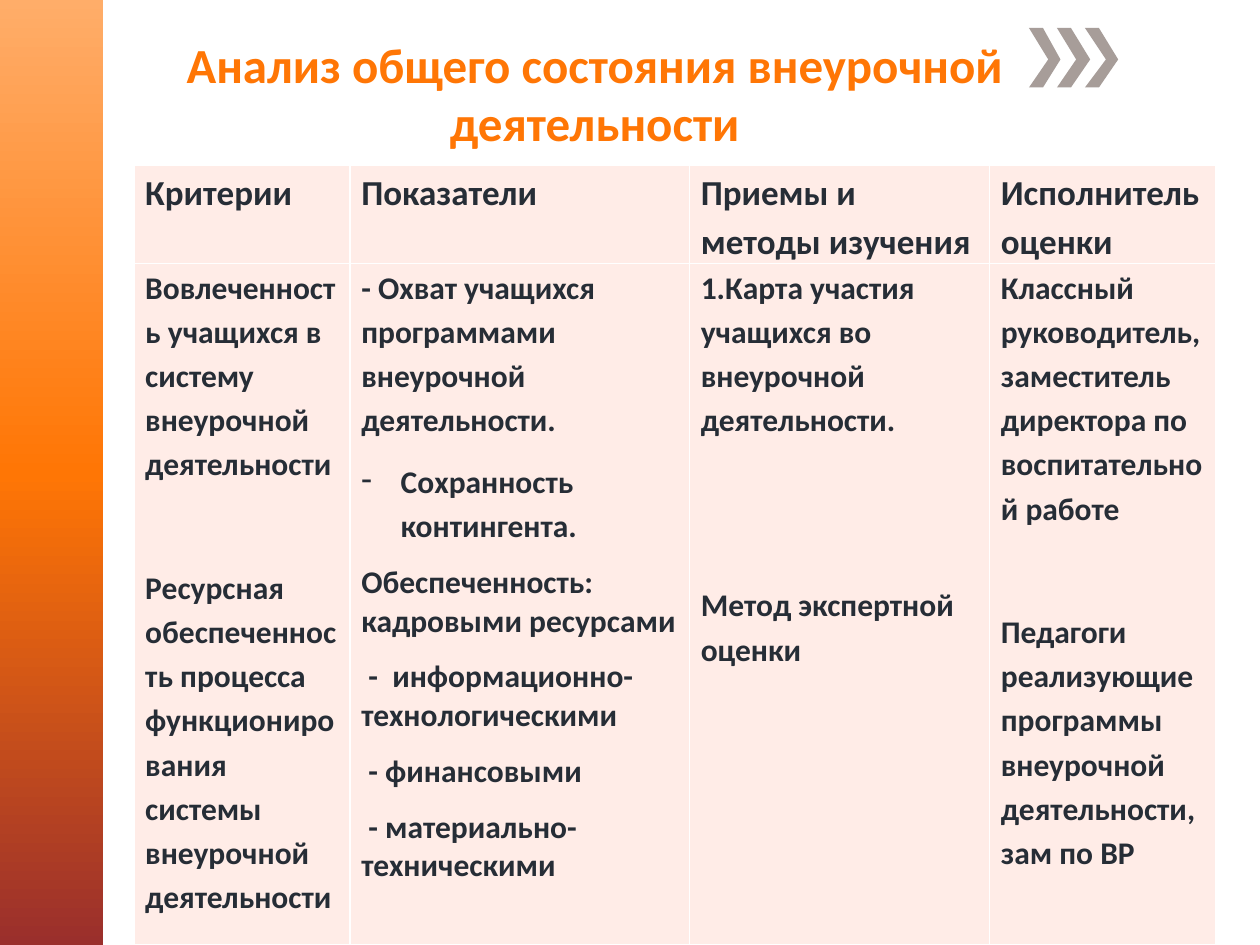
from copy import deepcopy

from lxml.etree import SubElement
from pptx import Presentation
from pptx.dml.color import RGBColor
from pptx.enum.shapes import MSO_SHAPE as Preset
from pptx.enum.text import MSO_ANCHOR as Anchor, PP_ALIGN as Align
from pptx.oxml.ns import qn
from pptx.util import Pt

COLORS = {
    "light": "FFAD69",
    "orange": "FF7605",
    "maroon": "9A2F2C",
    "chevron": "A79D99",
    "cell": "FFECE7",
    "text": "262D36",
    "border": "FFFFFF",
}
FONT = "Calibri"
GAP = 35.25
COLUMN_WIDTHS = [123.5, 194, 171.5, 129]
ROW_HEIGHTS = [56, 389.5]
HEADERS = ["Критерии", "Показатели", "Приемы и методы изучения", "Исполнитель оценки"]
BODY = [
    [
        {"text": "Вовлеченность учащихся в систему внеурочной деятельности"},
        {"text": "Ресурсная обеспеченность процесса функционирования системы "
                 "внеурочной деятельности", "before": GAP},
    ],
    [
        {"text": "- Охват учащихся программами внеурочной деятельности."},
        {"text": "Сохранность контингента.", "bullet": "-"},
        {"text": "Обеспеченность: кадровыми ресурсами", "spacing": 1.0},
        {"text": " -  информационно-технологическими", "spacing": 1.0},
        {"text": " - финансовыми", "spacing": 1.0},
        {"text": " - материально-техническими", "spacing": 1.0},
    ],
    [
        {"text": "1.Карта участия учащихся во внеурочной деятельности."},
        {"text": "Метод экспертной оценки", "before": 2 * GAP},
    ],
    [
        {"text": "Классный руководитель, заместитель директора по воспитательной работе"},
        {"text": "Педагоги реализующие программы внеурочной деятельности, зам по ВР",
         "before": GAP},
    ],
]


def color(name):
    return RGBColor.from_string(COLORS[name])


def set_font(paragraph, size, color_name):
    font = paragraph.font
    font.name = FONT
    font.size = Pt(size)
    font.bold = True
    font.color.rgb = color(color_name)


def add_sidebar(slide, left, top, width, height):
    shape = slide.shapes.add_shape(Preset.RECTANGLE, Pt(left), Pt(top), Pt(width), Pt(height))
    shape.shadow.inherit = False
    shape.line.fill.background()
    shape.fill.gradient()
    shape.fill.gradient_angle = 270
    first_stop = shape.fill._fill._gradFill.gsLst[0]
    first_stop.addnext(deepcopy(first_stop))
    names = ["light", "orange", "maroon"]
    for stop, position, name in zip(shape.fill.gradient_stops, [0, 0.5, 1], names):
        stop.position = position
        stop.color.rgb = color(name)


def add_chevrons(slide, left, top, width, height, step):
    group = slide.shapes.add_group_shape()
    arm, notch, middle = 7.5, 11, height / 2
    outline = [(0, 0), (notch, middle), (0, height), (arm, height), (width, middle)]
    for index in range(3):
        x = left + index * step
        builder = group.shapes.build_freeform(x + arm, top, scale=Pt(1))
        builder.add_line_segments([(x + dx, top + dy) for dx, dy in outline], close=True)
        shape = builder.convert_to_shape()
        shape.shadow.inherit = False
        shape.fill.solid()
        shape.fill.fore_color.rgb = color("chevron")
        shape.line.fill.background()


def add_title(slide, left, top, width, height):
    frame = slide.shapes.add_textbox(Pt(left), Pt(top), Pt(width), Pt(height)).text_frame
    frame.word_wrap = True
    frame.vertical_anchor = Anchor.TOP
    paragraph = frame.paragraphs[0]
    paragraph.text = "Анализ общего состояния внеурочной деятельности"
    paragraph.alignment = Align.CENTER
    set_font(paragraph, 28, "orange")


def format_paragraph(paragraph, size, text, before=0, spacing=1.15, bullet=None):
    paragraph.text = text
    properties = paragraph._p.get_or_add_pPr()
    margin, indent = (24, -22.5) if bullet else (1.5, 0)
    properties.set("marL", str(Pt(margin)))
    properties.set("indent", str(Pt(indent)))
    if bullet:
        SubElement(properties, qn("a:buChar"), char=bullet)
    paragraph.line_spacing = spacing
    paragraph.space_before = Pt(before)
    paragraph.space_after = Pt(10)
    set_font(paragraph, size, "text")


def fill_cell(cell, items, size):
    cell.margin_left = cell.margin_right = Pt(5)
    cell.margin_top = cell.margin_bottom = 0
    cell.vertical_anchor = Anchor.TOP
    properties = cell._tc.get_or_add_tcPr()
    for side in ("lnL", "lnR", "lnT", "lnB"):
        line = SubElement(properties, qn(f"a:{side}"), w=str(Pt(1)))
        fill = SubElement(line, qn("a:solidFill"))
        SubElement(fill, qn("a:srgbClr"), val=COLORS["border"])
    cell.fill.solid()
    cell.fill.fore_color.rgb = color("cell")
    frame = cell.text_frame
    for index, item in enumerate(items):
        paragraph = frame.add_paragraph() if index else frame.paragraphs[0]
        format_paragraph(paragraph, size, **item)


def add_criteria_table(slide, left, top):
    table = slide.shapes.add_table(
        2, len(HEADERS), Pt(left), Pt(top), Pt(sum(COLUMN_WIDTHS)), Pt(sum(ROW_HEIGHTS))
    ).table
    table.first_row = table.horz_banding = False
    for row, height in zip(table.rows, ROW_HEIGHTS):
        row.height = Pt(height)
    for index, (width, header, items) in enumerate(zip(COLUMN_WIDTHS, HEADERS, BODY)):
        table.columns[index].width = Pt(width)
        fill_cell(table.cell(0, index), [{"text": header}], 20)
        fill_cell(table.cell(1, index), items, 18)


def main():
    presentation = Presentation()
    presentation.slide_width = Pt(720)
    presentation.slide_height = Pt(540)
    slide = presentation.slides.add_slide(presentation.slide_layouts[6])
    add_sidebar(slide, 0, 0, 59, 540)
    add_chevrons(slide, 588, 16.5, 18.5, 34, 16.25)
    add_title(slide, 96, 16, 487.5, 75)
    add_criteria_table(slide, 76.5, 94.5)
    presentation.save("out.pptx")


if __name__ == "__main__":
    main()
